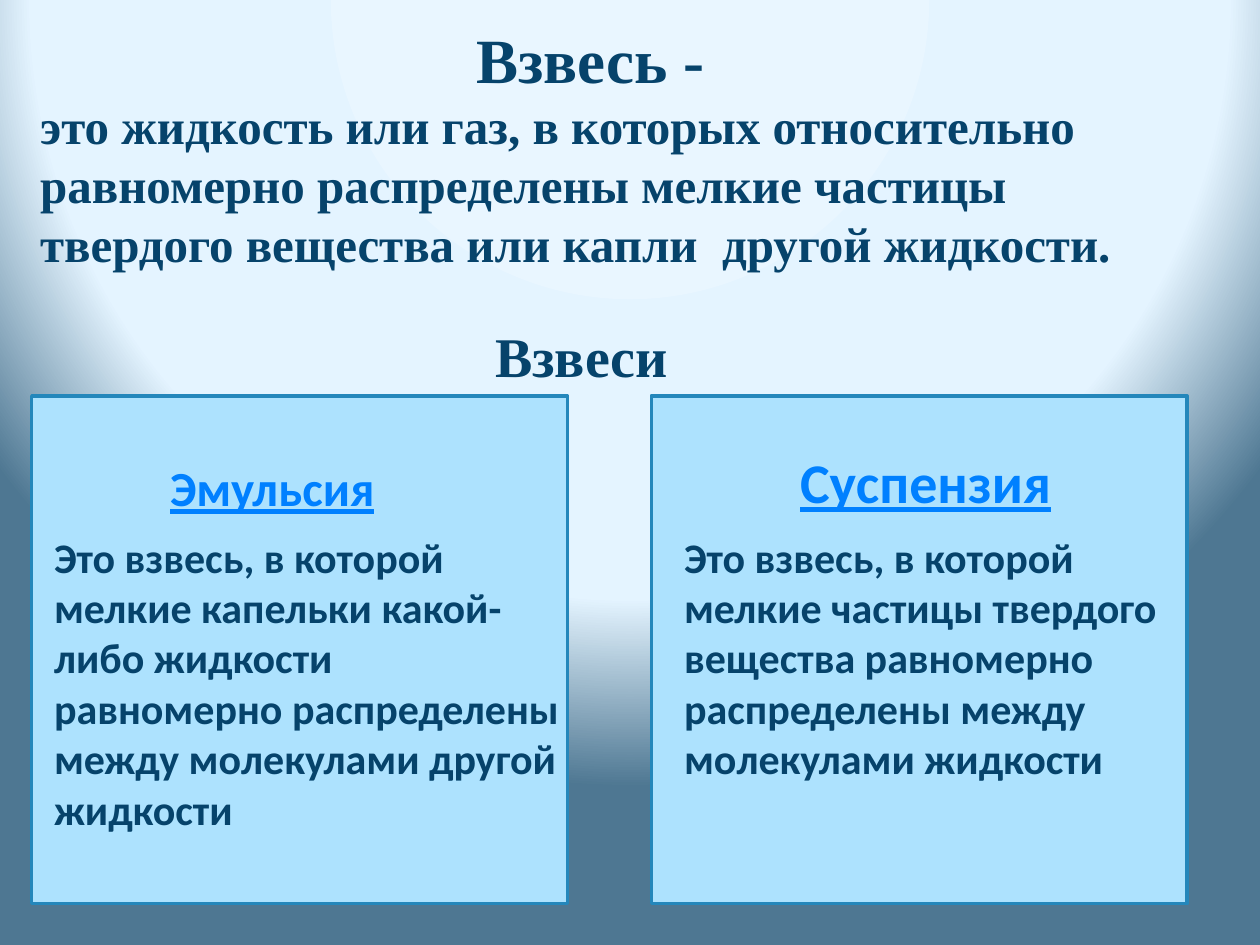
import dataclasses

import pptx
import pptx.dml.color
import pptx.enum.shapes
import pptx.enum.text
import pptx.oxml
import pptx.oxml.ns
import pptx.util

Cm = pptx.util.Cm
Pt = pptx.util.Pt
ALIGN = pptx.enum.text.PP_ALIGN


@dataclasses.dataclass(frozen=True)
class Theme:
    ink: str = "06436B"
    term: str = "0080FF"
    card: str = "ADE2FE"
    border: str = "2487BB"
    glow: tuple = ((0, "E9F6FF"), (76, "E4F4FF"), (100, "4E7792"))
    serif: str = "Times New Roman"
    sans: str = "Calibri"
    title: int = 36
    heading: int = 32
    body: int = 28
    detail: int = 24


THEME = Theme()


def rgb(code):
    return pptx.dml.color.RGBColor.from_string(code)


def paint_background(slide):
    slide.background.fill.gradient()
    default = slide.element.find(".//" + pptx.oxml.ns.qn("a:gradFill"))
    stops = "".join(
        f'<a:gs pos="{position * 1000}"><a:srgbClr val="{color}"/></a:gs>'
        for position, color in THEME.glow
    )
    glow = pptx.oxml.parse_xml(
        f'<a:gradFill {pptx.oxml.ns.nsdecls("a")} rotWithShape="1">'
        f"<a:gsLst>{stops}</a:gsLst>"
        '<a:path path="circle">'
        '<a:fillToRect l="50000" t="-80000" r="50000" b="180000"/>'
        "</a:path></a:gradFill>"
    )
    default.getparent().replace(default, glow)


def add_card(slide, left):
    card = slide.shapes.add_shape(
        pptx.enum.shapes.MSO_SHAPE.RECTANGLE, Cm(left), Cm(7.98), Cm(10.8), Cm(10.24)
    )
    card.shadow.inherit = False
    card.fill.solid()
    card.fill.fore_color.rgb = rgb(THEME.card)
    card.line.color.rgb = rgb(THEME.border)
    card.line.width = Pt(2)


def add_frame(slide, left, top, width, height):
    frame = slide.shapes.add_textbox(Cm(left), Cm(top), Cm(width), Cm(height)).text_frame
    frame.word_wrap = True
    frame.auto_size = pptx.enum.text.MSO_AUTO_SIZE.SHAPE_TO_FIT_TEXT
    return frame


def write(paragraph, text, *, size, font=THEME.sans, color=THEME.ink,
          underline=False, align=ALIGN.LEFT):
    paragraph.alignment = align
    run = paragraph.add_run()
    run.text = text
    run.font.name = font
    run.font.size = Pt(size)
    run.font.bold = True
    run.font.underline = underline
    run.font.color.rgb = rgb(color)


def add_definition(slide):
    definition = add_frame(slide, 0.56, 0.28, 23.32, 6.15)
    write(definition.paragraphs[0], "Взвесь -  ",
          size=THEME.title, font=THEME.serif, align=ALIGN.CENTER)
    write(definition.add_paragraph(),
          "это жидкость или газ, в которых относительно равномерно распределены "
          "мелкие частицы твердого вещества или капли  другой жидкости.",
          size=THEME.body, font=THEME.serif)
    kinds = add_frame(slide, 9.73, 6.35, 5.08, 1.63)
    write(kinds.paragraphs[0], "Взвеси", size=THEME.heading, font=THEME.serif)


def add_kind(slide, term, meaning, *, term_box, meaning_box, term_size):
    heading = add_frame(slide, *term_box)
    write(heading.paragraphs[0], term, size=term_size, color=THEME.term, underline=True)
    detail = add_frame(slide, *meaning_box)
    write(detail.paragraphs[0], meaning, size=THEME.detail)


def main():
    presentation = pptx.Presentation()
    presentation.slide_width = Cm(25.4)
    presentation.slide_height = Cm(19.05)
    slide = presentation.slides.add_slide(presentation.slide_layouts[6])
    paint_background(slide)
    for left in (13.13, 0.64):
        add_card(slide, left)
    add_definition(slide)
    add_kind(
        slide, "Эмульсия",
        "Это взвесь, в которой мелкие капельки какой-либо жидкости "
        "равномерно распределены между молекулами другой жидкости",
        term_box=(3.18, 9.1, 5.2, 1.45), meaning_box=(0.84, 10.58, 10.8, 6.4),
        term_size=THEME.body,
    )
    add_kind(
        slide, "Суспензия",
        "Это взвесь, в которой мелкие частицы твердого вещества "
        "равномерно распределены между молекулами жидкости",
        term_box=(15.88, 8.9, 6.65, 1.63), meaning_box=(13.54, 10.58, 10.5, 6.15),
        term_size=THEME.heading,
    )
    presentation.save("out.pptx")


if __name__ == "__main__":
    main()
